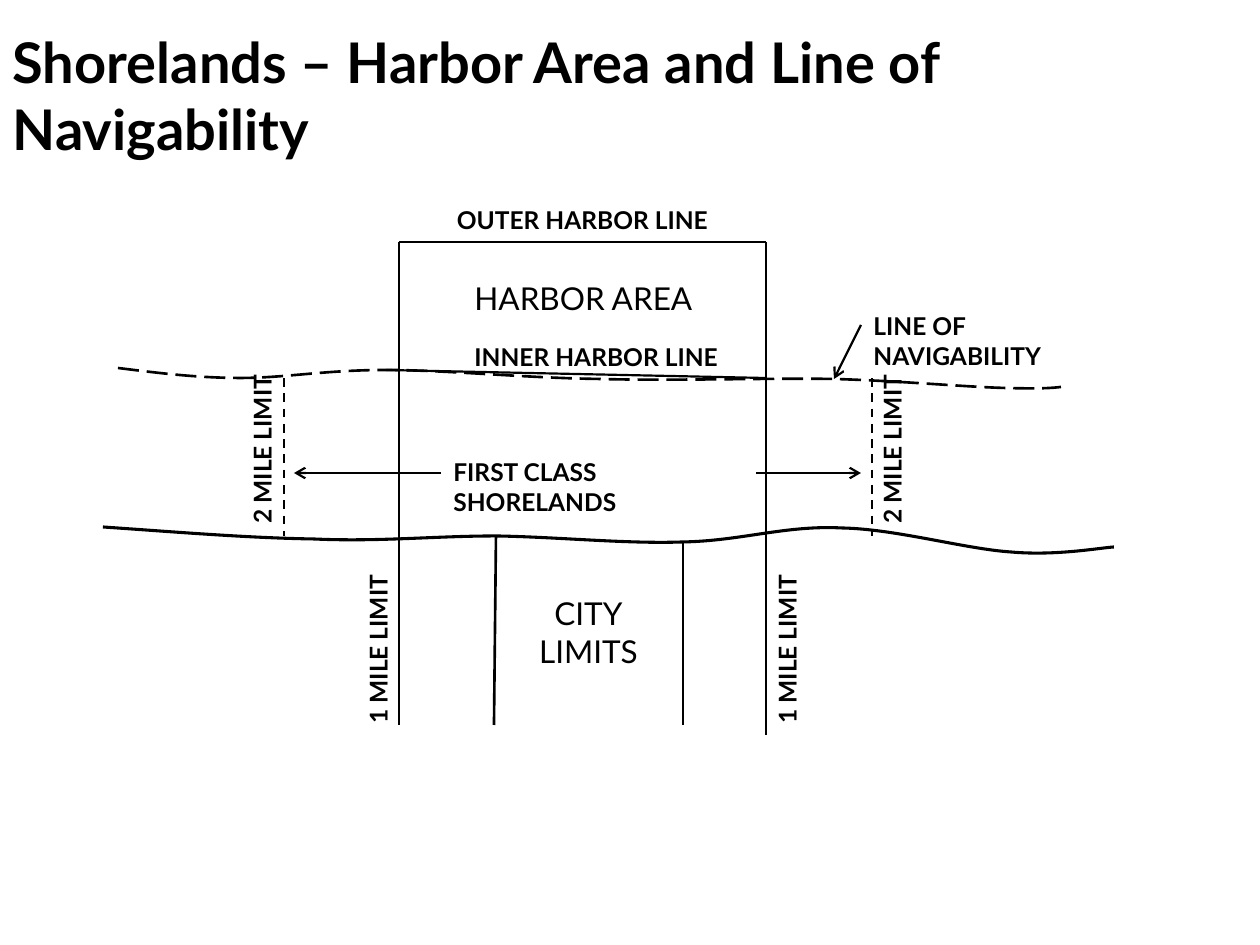
from lxml import etree
from pptx import Presentation
from pptx.dml.color import RGBColor
from pptx.enum.dml import MSO_LINE
from pptx.enum.shapes import MSO_CONNECTOR
from pptx.enum.text import MSO_ANCHOR, MSO_AUTO_SIZE, PP_ALIGN
from pptx.oxml.ns import qn
from pptx.util import Pt

LEFT, CENTER = PP_ALIGN.LEFT, PP_ALIGN.CENTER
TOP = MSO_ANCHOR.TOP
GROW = MSO_AUTO_SIZE.SHAPE_TO_FIT_TEXT
STRAIGHT = MSO_CONNECTOR.STRAIGHT
DASH, LONG_DASH = MSO_LINE.DASH, MSO_LINE.LONG_DASH
PX = 914400 / 126
BLACK = "000000"


def color(value):
    return RGBColor.from_string(value)


def write(box, frame, lines, size, bold, align):
    box.left, box.top, box.width, box.height = [round(n * PX) for n in frame]
    text = box.text_frame
    text.word_wrap = True
    text.vertical_anchor = TOP
    text.auto_size = GROW
    for index, line in enumerate(lines):
        para = text.add_paragraph() if index else text.paragraphs[0]
        para.alignment = align
        span = para.add_run()
        span.text = line
        span.font.name = "Lato"
        span.font.size = Pt(size)
        span.font.bold = bold
        span.font.color.rgb = color(BLACK)


deck = Presentation()
deck.slide_width, deck.slide_height = round(1260 * PX), round(945 * PX)
page = deck.slides.add_slide(deck.slide_layouts[5])

# Title
write(page.shapes.title, (0, 21, 1229, 81),
      ["Shorelands – Harbor Area and Line of Navigability"], 32, True, LEFT)

# Shoreline and line of navigability: start point, then three points per curve
shoreline = [
    (103, 527), (176, 532), (248, 538), (314, 539), (379, 542), (435, 536),
    (496, 536), (558, 537), (626, 544), (683, 542), (741, 541), (786, 525),
    (842, 528), (896, 529), (965, 549), (1011, 552), (1056, 556), (1099, 548),
    (1114, 547)]
navigability = [
    (118, 368), (158, 373), (197, 378), (241, 378), (285, 378), (325, 370),
    (386, 370), (445, 370), (524, 378), (599, 379), (674, 381), (766, 378),
    (834, 379), (901, 381), (966, 387), (1004, 388), (1042, 389), (1053, 388),
    (1061, 387)]
for points, weight, dash in [(shoreline, 1.75, None),
                             (navigability, 1.5, LONG_DASH)]:
    builder = page.shapes.build_freeform(*points[0], scale=PX)
    builder.add_line_segments(points[1:], close=False)
    wave = builder.convert_to_shape()
    wave.shadow.inherit = False
    wave.fill.background()
    wave.line.color.rgb = color(BLACK)
    wave.line.width = Pt(weight)
    wave.line.dash_style = dash
    # Join each three straight segments into one Bezier curve
    segments = list(wave.element.iter(qn("a:lnTo")))
    for start in range(0, len(segments), 3):
        first, *others = segments[start:start + 3]
        first.tag = qn("a:cubicBezTo")
        curve = first
        for other in others:
            curve.append(other[0])
            other.getparent().remove(other)

# Limits, harbor lines and pointers: ends, weight, dash, arrowhead
lines = [
    (496, 536, 494, 725, 1.5, None, False),
    (683, 542, 683, 725, 1.5, None, False),
    (399, 242, 399, 725, 1.25, None, False),
    (766, 242, 766, 735, 1.25, None, False),
    (399, 242, 766, 242, 1.25, None, False),
    (386, 370, 766, 378, 1.25, None, False),
    (284, 378, 284, 536, 1.25, DASH, False),
    (872, 378, 872, 536, 1.25, DASH, False),
    (861, 325, 834, 379, 1.25, None, True),
    (756, 473, 861, 473, 1.25, None, True),
    (441, 473, 294, 473, 1.25, None, True),
]
for *ends, weight, dash, arrow in lines:
    line = page.shapes.add_connector(STRAIGHT, *[round(n * PX) for n in ends])
    line.line.color.rgb = color(BLACK)
    line.line.width = Pt(weight)
    line.line.dash_style = dash
    properties = line.element.spPr
    if arrow:
        outline = properties.find(qn("a:ln"))
        etree.SubElement(outline, qn("a:tailEnd"), type="arrow")
    etree.SubElement(properties, qn("a:effectLst"))

# Labels: frame, lines, size, bold, alignment, rotation
labels = [
    ((420, 199, 325, 43), ["OUTER HARBOR LINE"], 14, True, CENTER, 0),
    ((462, 336, 273, 43), ["INNER HARBOR LINE"], 14, True, LEFT, 0),
    ((441, 451, 315, 43), ["FIRST CLASS SHORELANDS"], 14, True, LEFT, 0),
    ((861, 305, 284, 43), ["LINE OF NAVIGABILITY"], 14, True, LEFT, 0),
    ((163, 415, 199, 43), ["2 MILE LIMIT"], 14, True, LEFT, 270),
    ((793, 415, 199, 43), ["2 MILE LIMIT"], 14, True, LEFT, 270),
    ((284, 620, 189, 43), ["1 MILE LIMIT"], 14, True, LEFT, 270),
    ((693, 620, 189, 43), ["1 MILE LIMIT"], 14, True, LEFT, 270),
    ((431, 273, 305, 53), ["HARBOR AREA"], 18, False, CENTER, 0),
    ((494, 588, 189, 89), ["CITY", "LIMITS"], 18, False, CENTER, 0),
]
for *label, rotation in labels:
    box = page.shapes.add_textbox(0, 0, 0, 0)
    write(box, *label)
    box.rotation = rotation

deck.save("out.pptx")
